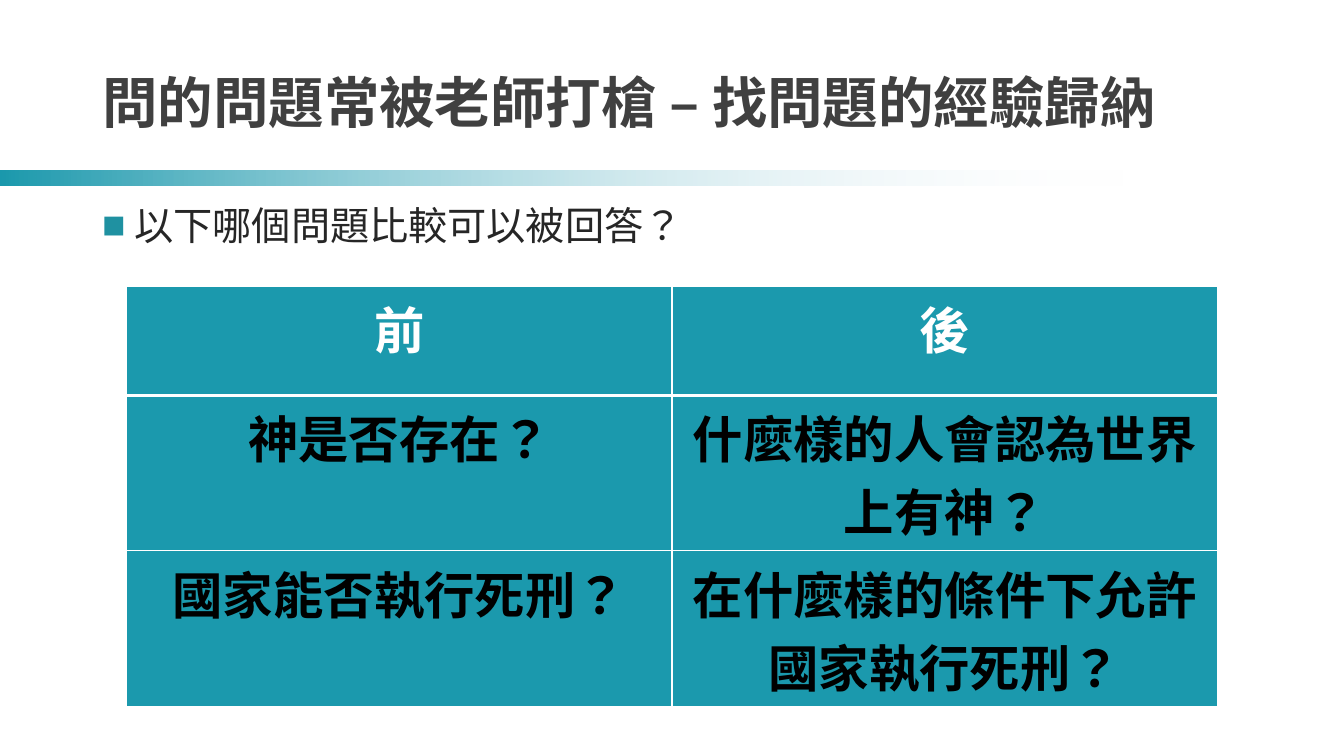
from lxml.etree import SubElement
from pptx import Presentation
from pptx.dml.color import RGBColor
from pptx.enum.lang import MSO_LANGUAGE_ID
from pptx.enum.shapes import MSO_SHAPE
from pptx.enum.text import MSO_ANCHOR, PP_ALIGN
from pptx.oxml.ns import qn
from pptx.util import Pt

FONT = "Noto Sans CJK SC"
TEAL = RGBColor(0x1B, 0x99, 0xAD)
BULLET_TEAL = RGBColor(0x1F, 0x91, 0xA1)
PALE = RGBColor(0xF6, 0xF8, 0xFC)
WHITE = RGBColor(0xFF, 0xFF, 0xFF)
BLACK = RGBColor(0, 0, 0)
TITLE_GREY = RGBColor(0x40, 0x40, 0x40)
BODY_GREY = RGBColor(0x26, 0x26, 0x26)

QUESTIONS = [
    ("前", "後"),
    ("神是否存在？", "什麼樣的人會認為世界上有神？"),
    ("國家能否執行死刑？", "在什麼樣的條件下允許國家執行死刑？"),
]
HEADER_HEIGHT = 78
QUESTION_HEIGHT = 111


def style_runs(paragraph, size, color, bold=False):
    for span in paragraph.runs:
        font = span.font
        font.name, font.size, font.bold = FONT, Pt(size), bold
        font.color.rgb = color
        font.language_id = MSO_LANGUAGE_ID.TRADITIONAL_CHINESE
        SubElement(span._r.get_or_add_rPr(), qn("a:ea"), typeface=FONT)


def add_text(page, text, top, height, anchor):
    """Add a one-paragraph box on the slide's text column and return its paragraph."""
    box = page.shapes.add_textbox(Pt(66), Pt(top), Pt(790), Pt(height))
    frame = box.text_frame
    frame.word_wrap = True
    frame.vertical_anchor = anchor
    frame.text = text
    paragraph = frame.paragraphs[0]
    paragraph.line_spacing = 0.9
    return paragraph


def add_square_bullet(paragraph, indent):
    properties = paragraph._p.get_or_add_pPr()
    properties.set("marL", str(Pt(indent)))
    properties.set("indent", str(-Pt(indent)))
    color = SubElement(properties, qn("a:buClr"))
    SubElement(color, qn("a:srgbClr"), val=str(BULLET_TEAL))
    SubElement(properties, qn("a:buSzPct"), val="60000")
    SubElement(properties, qn("a:buFont"), typeface=FONT)
    SubElement(properties, qn("a:buChar"), char="■")


def add_fading_bar(page):
    bar = page.shapes.add_shape(MSO_SHAPE.RECTANGLE, 0, Pt(122), Pt(806.4), Pt(10.8))
    bar.shadow.inherit = False
    bar.line.fill.background()
    bar.fill.gradient()
    bar.fill.gradient_angle = 180
    for stop, color in zip(bar.fill.gradient_stops, (PALE, TEAL)):
        stop.color.rgb = color
    clear_end = next(bar._element.spPr.iter(qn("a:srgbClr")))
    SubElement(clear_end, qn("a:alpha"), val="0")


def add_cell_border(cell, side, width):
    line = SubElement(cell._tc.get_or_add_tcPr(), qn(f"a:ln{side}"), w=str(Pt(width)))
    fill = SubElement(line, qn("a:solidFill"))
    SubElement(fill, qn("a:srgbClr"), val=str(WHITE))


def fill_cell(cell, text, row):
    widths = {"L": 1, "R": 1, "T": 3 if row == 1 else 1, "B": 3 if row == 0 else 1}
    for side, width in widths.items():
        add_cell_border(cell, side, width)
    cell.fill.solid()
    cell.fill.fore_color.rgb = TEAL
    cell.text = text
    paragraph = cell.text_frame.paragraphs[0]
    paragraph.alignment = PP_ALIGN.CENTER
    style_runs(paragraph, 36, WHITE if row == 0 else BLACK, bold=True)


def add_question_table(page):
    height = HEADER_HEIGHT + QUESTION_HEIGHT * (len(QUESTIONS) - 1)
    frame = page.shapes.add_table(
        len(QUESTIONS), 2, Pt(90.5), Pt(204.5), Pt(779), Pt(height))
    table = frame.table
    for row, texts in enumerate(QUESTIONS):
        table.rows[row].height = Pt(QUESTION_HEIGHT if row else HEADER_HEIGHT)
        for column, text in enumerate(texts):
            fill_cell(table.cell(row, column), text, row)


def main():
    deck = Presentation()
    deck.slide_width, deck.slide_height = Pt(960), Pt(540)
    page = deck.slides.add_slide(deck.slide_layouts[6])
    add_fading_bar(page)
    title = add_text(page, "問的問題常被老師打槍 – 找問題的經驗歸納", 28.8, 93.6,
                     MSO_ANCHOR.MIDDLE)
    style_runs(title, 39.6, TITLE_GREY, bold=True)
    prompt = add_text(page, "以下哪個問題比較可以被回答？", 144, 343, MSO_ANCHOR.TOP)
    add_square_bullet(prompt, 23)
    style_runs(prompt, 28, BODY_GREY)
    add_question_table(page)
    deck.save("out.pptx")


if __name__ == "__main__":
    main()
